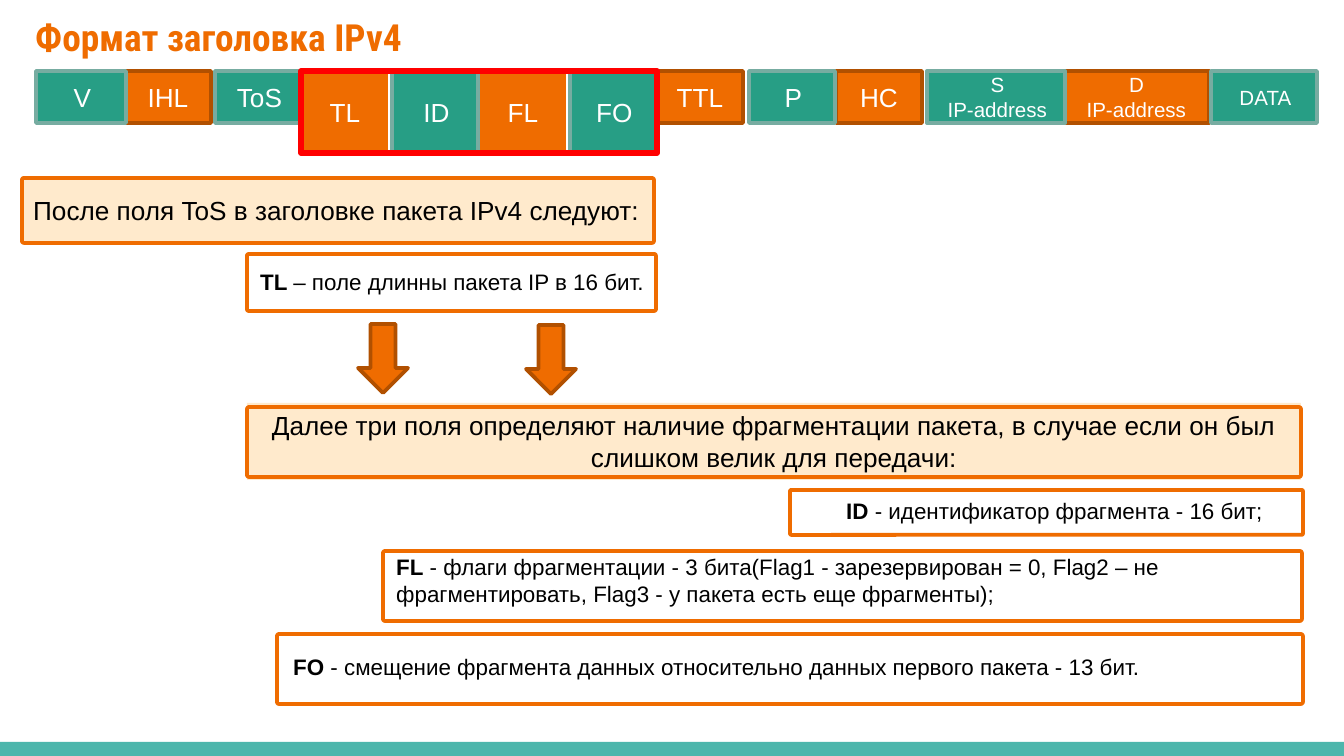
from pptx import Presentation
from pptx import util as u
from pptx.dml.color import RGBColor
from pptx.enum import shapes, text

PX = 9144000 / 1344
COLORS = {
    "orange": "EF6C00", "rust": "B15000", "teal": "279E85", "sage": "77ACA1",
    "peach": "FFEACC", "red": "FF0000", "footer": "4DB6AC",
    "white": "FFFFFF", "black": "000000",
}
KIND = shapes.MSO_SHAPE

prs = Presentation()
prs.slide_width, prs.slide_height = u.Emu(round(1344 * PX)), u.Emu(round(756 * PX))
slide = prs.slides.add_slide(prs.slide_layouts[6])


def add_block(kind, box, fill=None, line=None, line_width=2):
    block = slide.shapes.add_shape(kind, *[round(n * PX) for n in box])
    block.shadow.inherit = False
    if fill:
        block.fill.solid()
        block.fill.fore_color.rgb = RGBColor.from_string(COLORS[fill])
    else:
        block.fill.background()
    if line:
        block.line.color.rgb = RGBColor.from_string(COLORS[line])
        block.line.width = u.Pt(line_width)
    else:
        block.line.fill.background()
    if kind == KIND.ROUNDED_RECTANGLE:
        block.adjustments[0] = 0.03
    return block


def write(holder, lines, size, color="black", align=text.PP_ALIGN.LEFT, term="", wrap=True):
    """Fill the holder with one paragraph per line, after an optional bold term."""
    frame = holder.text_frame
    frame.word_wrap = wrap
    for i, line in enumerate(lines):
        paragraph = frame.paragraphs[0] if i == 0 else frame.add_paragraph()
        paragraph.alignment = align
        paragraph.font.size = u.Pt(size)
        paragraph.font.name = "Arial"
        paragraph.font.color.rgb = RGBColor.from_string(COLORS[color])
        if term and i == 0:
            bold = paragraph.add_run()
            bold.text = term
            bold.font.bold = True
        paragraph.add_run().text = line
    return frame


add_block(KIND.RECTANGLE, (0, 742, 1344, 14), "footer")
add_block(KIND.ROUNDED_RECTANGLE, (22, 178, 632, 65), "peach", "orange")

title = slide.shapes.add_textbox(*[round(n * PX) for n in (22, 1, 1274, 63)])
title_frame = write(title, ["Формат заголовка IPv4"], 20, "orange")
title_frame.margin_top = title_frame.margin_bottom = u.Inches(0.1)
title_frame.paragraphs[0].font.name = "Roboto Condensed"
title_frame.paragraphs[0].font.bold = True

# Header fields: lines, left, width; teal and orange alternate
fields = [
    (["V"], 36, 90), (["IHL"], 125, 86), (["ToS"], 215, 86), (["TL"], 302, 86),
    (["ID"], 392, 86), (["FL"], 480, 86), (["FO"], 570, 86), (["TTL"], 657, 86),
    (["P"], 749, 86), (["HC"], 836, 86), (["S", "IP-address"], 927, 138),
    (["D", "IP-address"], 1064, 145), (["DATA"], 1211, 106),
]
highlighted = ("TL", "ID", "FL", "FO")
for fill, edge, start in (("orange", "rust", 1), ("teal", "sage", 0)):
    for lines, left, width in fields[start::2]:
        tall = lines[0] in highlighted
        field = add_block(KIND.RECTANGLE, (left, 71, width, 82 if tall else 52), fill,
                          None if tall and fill == "orange" else edge)
        frame = write(field, lines, 14 if width <= 90 else 11, "white", text.PP_ALIGN.CENTER)
        frame.vertical_anchor = text.MSO_ANCHOR.MIDDLE
        if fill == "teal":
            frame.margin_left = u.Inches(0.12)
add_block(KIND.RECTANGLE, (301, 71, 356, 82), None, "red", 3)

fragmentation = add_block(KIND.RECTANGLE, (247, 403, 1054, 77), "peach")
write(fragmentation, ["Далее три поля определяют наличие фрагментации пакета, в случае если он был",
                      "слишком велик для передачи:"], 14, align=text.PP_ALIGN.CENTER)
fragmentation.text_frame.vertical_anchor = text.MSO_ANCHOR.TOP

# Notes: text box, size, bold term, lines
notes = [
    ((20, 188, 650, 45), 14, "", ["После поля ToS в заголовке пакета IPv4 следуют:"]),
    ((247, 261, 418, 41), 12, "TL ", ["– поле длинны пакета IP в 16 бит."]),
    ((833, 491, 449, 41), 12, "ID ", ["- идентификатор фрагмента - 16 бит;"]),
    ((383, 547, 798, 67), 12, "FL", [
        " - флаги фрагментации - 3 бита(Flag1 - зарезервирован = 0, Flag2 – не",
        "фрагментировать, Flag3 - у пакета есть еще фрагменты);"]),
    ((280, 647, 888, 41), 12, "FO ",
     ["- смещение фрагмента данных относительно данных первого пакета - 13 бит."]),
]
for box, size, term, lines in notes:
    note = slide.shapes.add_textbox(*[round(n * PX) for n in box])
    write(note, lines, size, term=term, wrap=False)

for outline in [(247, 254, 409, 57), (247, 407, 1054, 70), (790, 490, 513, 45),
                (383, 551, 919, 70), (277, 634, 1026, 70)]:
    add_block(KIND.ROUNDED_RECTANGLE, outline, None, "orange")

for left, top in ((358, 324), (526, 325)):
    add_block(KIND.DOWN_ARROW, (left, top, 50, 69), "orange", "rust")

prs.save("out.pptx")
